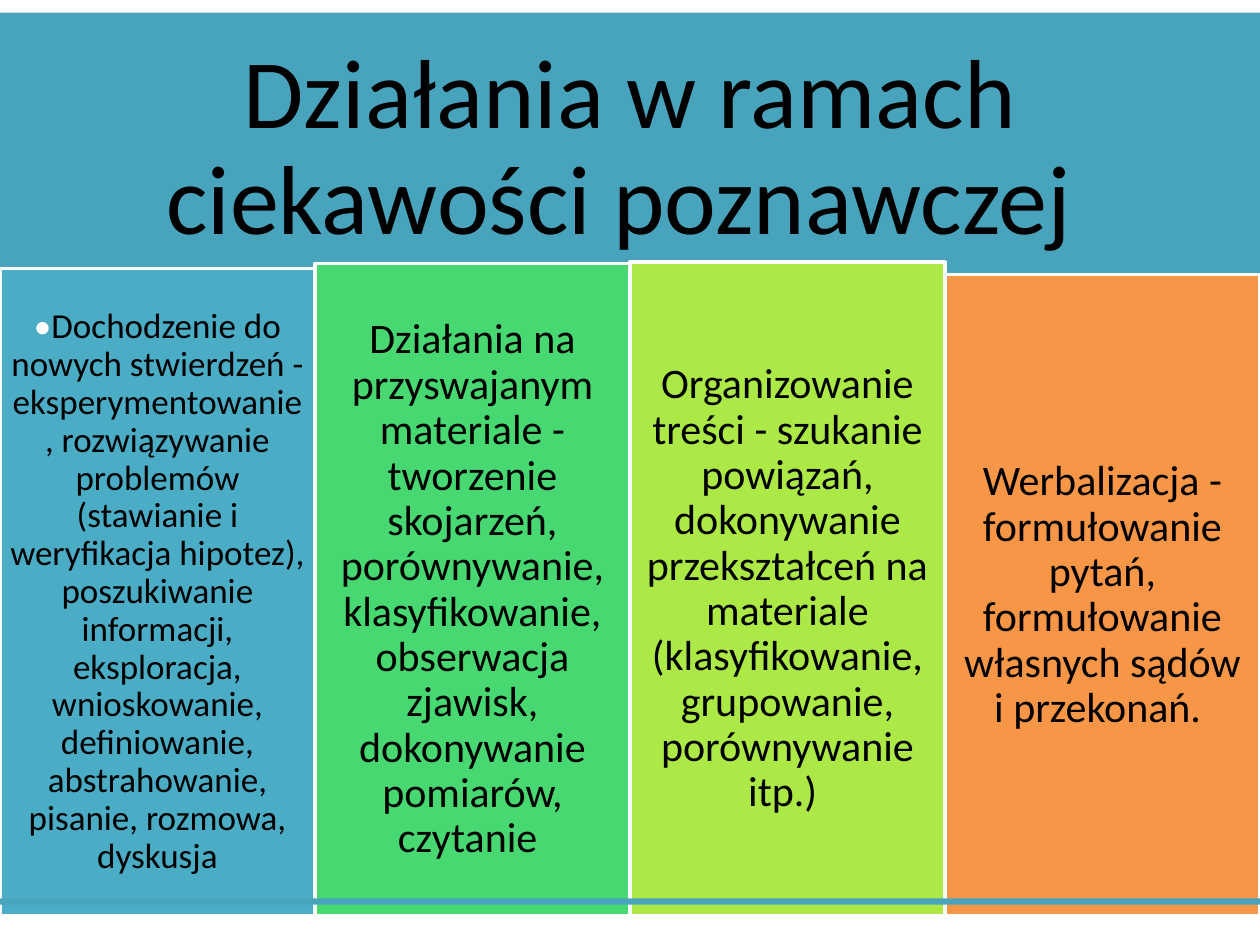
"""Build a slide with a title banner above four coloured columns of learning activities."""
from dataclasses import dataclass

from pptx import Presentation
from pptx import util as u
from pptx.dml import color
from pptx.enum import shapes, text

EMU_PER_PX = 9144
PAGE_WIDTH, PAGE_HEIGHT = 1000, 750
COLUMN_WIDTH = 250
COLUMN_BOTTOM = 727
FONT = "Calibri"
COLORS = {
    "banner": "48A4BD",
    "blue": "4BACC6",
    "green": "47D872",
    "lime": "ACE946",
    "orange": "F79646",
    "white": "FFFFFF",
    "black": "000000",
}


@dataclass(frozen=True)
class Span:
    words: str
    color: str = "black"


@dataclass(frozen=True)
class Panel:
    left: int
    top: int
    width: int
    height: int
    fill: str
    spans: tuple[Span, ...] = ()
    size: int = 24
    inset: int = 10
    outlined: bool = False


@dataclass(frozen=True)
class Column:
    top: int
    fill: str
    spans: tuple[Span, ...]
    size: int = 24
    inset: int = 10


BANNER = Panel(
    0, 10, PAGE_WIDTH, 218, "banner",
    (Span("Działania w ramach ciekawości poznawczej "),), size=56, inset=23,
)
FOOTER = Panel(0, 713, PAGE_WIDTH, 5, "banner")
COLUMNS = (
    Column(213, "blue", (
        Span("•", "white"),
        Span(
            "Dochodzenie do nowych stwierdzeń - eksperymentowanie, "
            "rozwiązywanie problemów (stawianie i weryfikacja hipotez), "
            "poszukiwanie informacji, eksploracja, wnioskowanie, definiowanie, "
            "abstrahowanie, pisanie, rozmowa, dyskusja"
        ),
    ), size=20, inset=8),
    Column(209, "green", (Span(
        "Działania na przyswajanym materiale - tworzenie skojarzeń, "
        "porównywanie, klasyfikowanie, obserwacja zjawisk, "
        "dokonywanie pomiarów, czytanie "
    ),)),
    Column(208, "lime", (Span(
        "Organizowanie treści - szukanie powiązań, dokonywanie przekształceń "
        "na materiale (klasyfikowanie, grupowanie, porównywanie itp.) "
    ),)),
    Column(218, "orange", (Span(
        "Werbalizacja - formułowanie pytań, formułowanie własnych sądów i przekonań. "
    ),)),
)


def px(length: int) -> u.Emu:
    return u.Emu(length * EMU_PER_PX)


def rgb(name: str) -> color.RGBColor:
    return color.RGBColor.from_string(COLORS[name])


def column_panel(index: int, column: Column) -> Panel:
    return Panel(
        index * COLUMN_WIDTH, column.top, COLUMN_WIDTH, COLUMN_BOTTOM - column.top,
        column.fill, column.spans, column.size, column.inset, outlined=True,
    )


def write_spans(box, panel: Panel) -> None:
    frame = box.text_frame
    frame.word_wrap = True
    frame.vertical_anchor = text.MSO_ANCHOR.MIDDLE
    frame.margin_left = frame.margin_right = px(panel.inset)
    frame.margin_top = frame.margin_bottom = px(panel.inset)
    para = frame.paragraphs[0]
    para.alignment = text.PP_ALIGN.CENTER
    para.line_spacing = 0.9
    for span in panel.spans:
        run = para.add_run()
        run.text = span.words
        run.font.name = FONT
        run.font.size = u.Pt(panel.size)
        run.font.color.rgb = rgb(span.color)


def draw_panel(page, panel: Panel) -> None:
    box = page.shapes.add_shape(
        shapes.MSO_SHAPE.RECTANGLE,
        px(panel.left), px(panel.top), px(panel.width), px(panel.height),
    )
    box.shadow.inherit = False
    box.fill.solid()
    box.fill.fore_color.rgb = rgb(panel.fill)
    if panel.outlined:
        box.line.color.rgb = rgb("white")
        box.line.width = u.Pt(2)
    else:
        box.line.fill.background()
    if panel.spans:
        write_spans(box, panel)


def main() -> None:
    deck = Presentation()
    deck.slide_width, deck.slide_height = px(PAGE_WIDTH), px(PAGE_HEIGHT)
    page = deck.slides.add_slide(deck.slide_layouts[6])
    columns = [column_panel(index, column) for index, column in enumerate(COLUMNS)]
    for panel in (BANNER, *columns, FOOTER):
        draw_panel(page, panel)
    deck.save("out.pptx")


if __name__ == "__main__":
    main()
